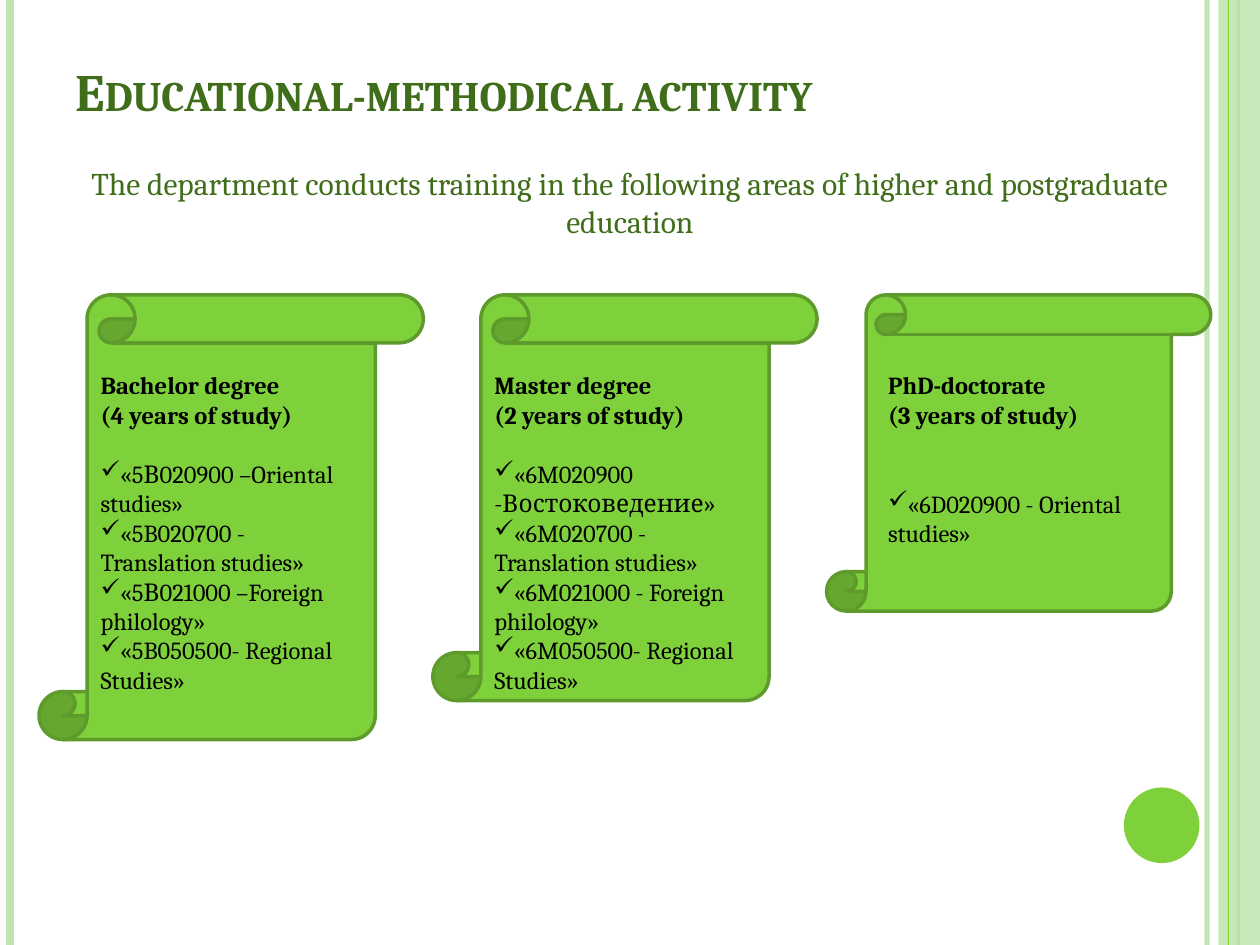
from lxml import etree
from pptx import Presentation
from pptx.dml.color import RGBColor
from pptx.enum.shapes import MSO_CONNECTOR, MSO_SHAPE
from pptx.enum.text import MSO_ANCHOR, MSO_AUTO_SIZE, PP_ALIGN
from pptx.oxml.ns import qn
from pptx.util import Inches, Pt

GREEN = RGBColor(0x7F, 0xD1, 0x3B)
PALE = RGBColor(0xC0, 0xE5, 0xAF)
EDGE = RGBColor(0x5E, 0x9B, 0x2C)
DARK = RGBColor(0x3F, 0x6D, 0x19)
BLACK = RGBColor(0, 0, 0)
FONT = "Cambria"


def add_run(p, text, size, color, bold=False):
    r = p.add_run()
    r.text = text
    r.font.name = FONT
    r.font.size = Pt(size)
    r.font.bold = bold
    r.font.color.rgb = color
    return r


def set_alpha(fill, percent):
    clr = fill._xPr.find(".//" + qn("a:srgbClr"))
    etree.SubElement(clr, qn("a:alpha"), val=str(percent * 1000))


prs = Presentation()
prs.slide_width = Inches(10)
prs.slide_height = Inches(7.5)
s = prs.slides.add_slide(prs.slide_layouts[5])

rules = {}
for x, color, width in [(9.58, PALE, 3), (0.08, PALE, 4.5), (9.83, GREEN, 1.5), (9.75, GREEN, 0.75)]:
    ln = s.shapes.add_connector(MSO_CONNECTOR.STRAIGHT, Inches(x), 0, Inches(x), prs.slide_height)
    ln.line.color.rgb = color
    ln.line.width = Pt(width)
    etree.SubElement(ln._element.spPr, qn("a:effectLst"))
    rules[x] = ln
set_alpha(rules[9.58].line.fill, 93)

band = s.shapes.add_shape(MSO_SHAPE.RECTANGLE, Inches(9.67), 0, Inches(0.33), prs.slide_height)
dot = s.shapes.add_shape(MSO_SHAPE.OVAL, Inches(8.92), Inches(6.25), Inches(0.6), Inches(0.6))
for sp, color in [(band, PALE), (dot, GREEN)]:
    sp.shadow.inherit = False
    sp.fill.solid()
    sp.fill.fore_color.rgb = color
    sp.line.fill.background()
set_alpha(band.fill, 87)
rules[9.75]._element.addprevious(band._element)

title = s.shapes.title
title.left, title.top = Inches(0.5), Inches(0.3)
title.width, title.height = Inches(8.17), Inches(0.72)
tf = title.text_frame
tf.word_wrap = True
tf.auto_size = MSO_AUTO_SIZE.NONE
tf.vertical_anchor = MSO_ANCHOR.BOTTOM
p = tf.paragraphs[0]
p.alignment = PP_ALIGN.LEFT
r = add_run(p, "Educational-methodical activity", 30, DARK, True)
r.font._element.set("cap", "small")
s.shapes._spTree.append(title._element)

intro = s.shapes.add_textbox(Inches(0.47), Inches(1.25), Inches(9.06), Inches(0.71))
tf = intro.text_frame
tf.word_wrap = True
p = tf.paragraphs[0]
p.alignment = PP_ALIGN.CENTER
add_run(p, "The department conducts training in the following areas of higher and postgraduate education",
        18, DARK)

degrees = [
    ("Bachelor degree", "(4 years of study)", 3.53, 2.93, 17,
     ["«5В020900 –Oriental studies»", "«5B020700 - Translation studies»",
      "«5В021000 –Foreign philology»", "«5B050500- Regional Studies»"]),
    ("Master degree", "(2 years of study)", 3.22, 2.93, 17,
     ["«6M020900 -Востоковедение»", "«6M020700 - Translation studies»",
      "«6M021000 - Foreign philology»", "«6M050500- Regional Studies»"]),
    ("PhD-doctorate", "(3 years of study)", 2.51, 1.75, 34,
     ["«6D020900 - Oriental studies»"]),
]
for i, (name, years, scroll_h, text_h, gap, programmes) in enumerate(degrees):
    left = 0.31 + i * 3.125
    scroll = s.shapes.add_shape(MSO_SHAPE.VERTICAL_SCROLL, Inches(left), Inches(2.34),
                                Inches(3.05), Inches(scroll_h))
    scroll.shadow.inherit = False
    scroll.fill.solid()
    scroll.fill.fore_color.rgb = GREEN
    scroll.line.color.rgb = EDGE
    scroll.line.width = Pt(2)

    box = s.shapes.add_textbox(Inches(left + 0.39), Inches(2.89), Inches(2.27), Inches(text_h))
    tf = box.text_frame
    tf.word_wrap = True
    add_run(tf.paragraphs[0], name, 14, BLACK, True)
    add_run(tf.add_paragraph(), years, 14, BLACK, True)
    for j, programme in enumerate(programmes):
        p = tf.add_paragraph()
        p.space_before = Pt(0 if j else gap)
        etree.SubElement(p._p.get_or_add_pPr(), qn("a:buChar"), char="✓")
        add_run(p, programme, 14, BLACK)

prs.save("out.pptx")
